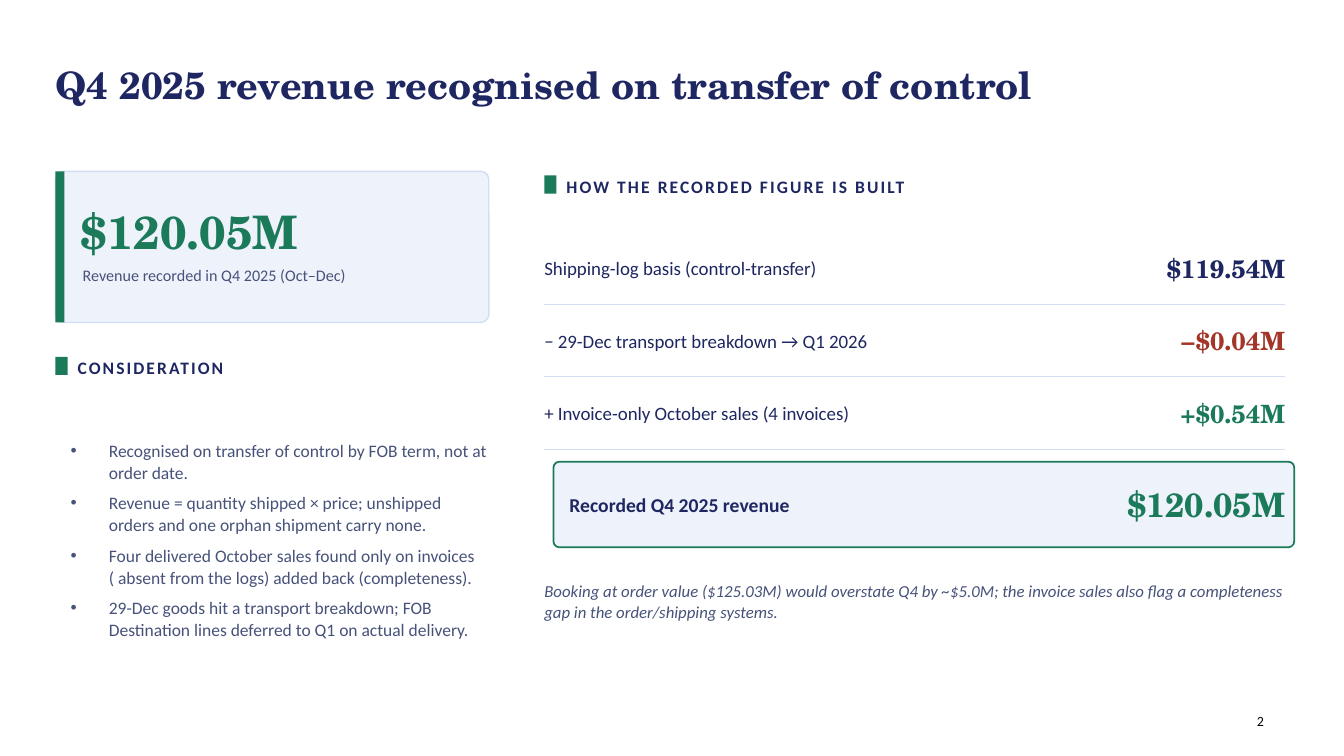
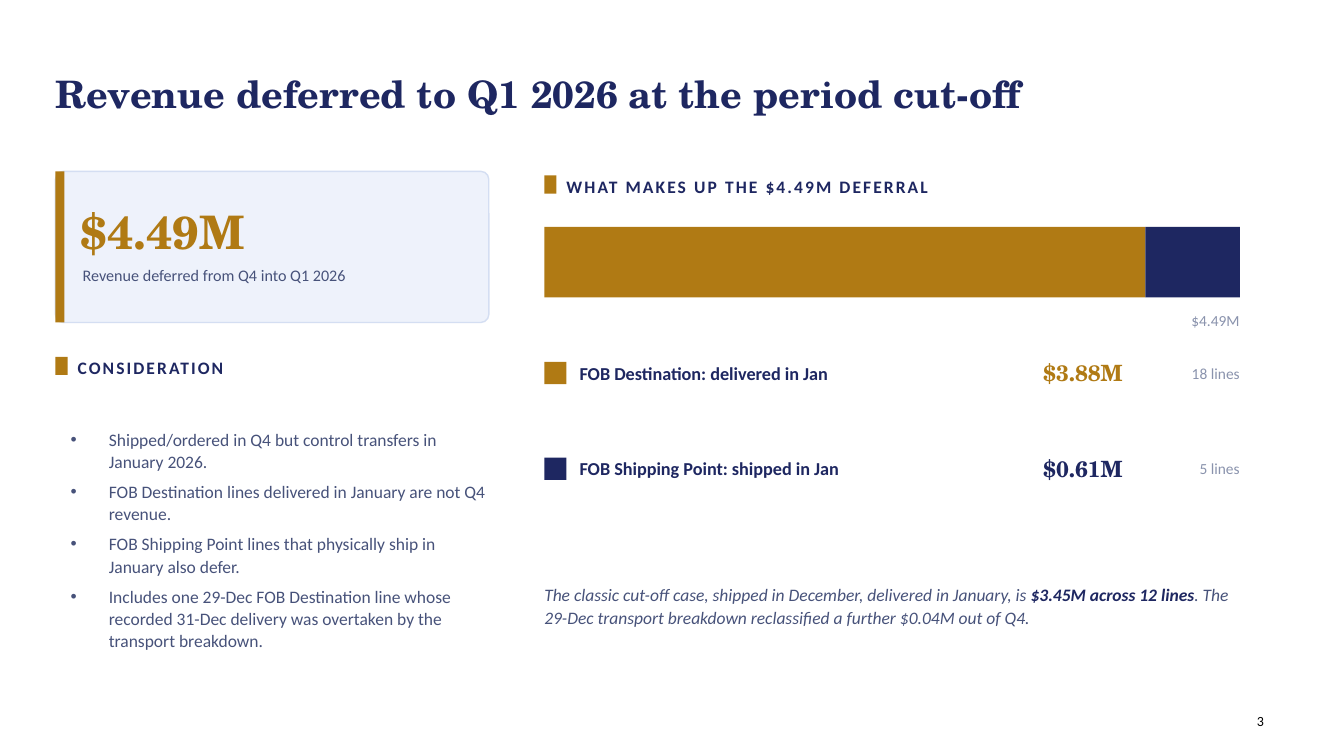
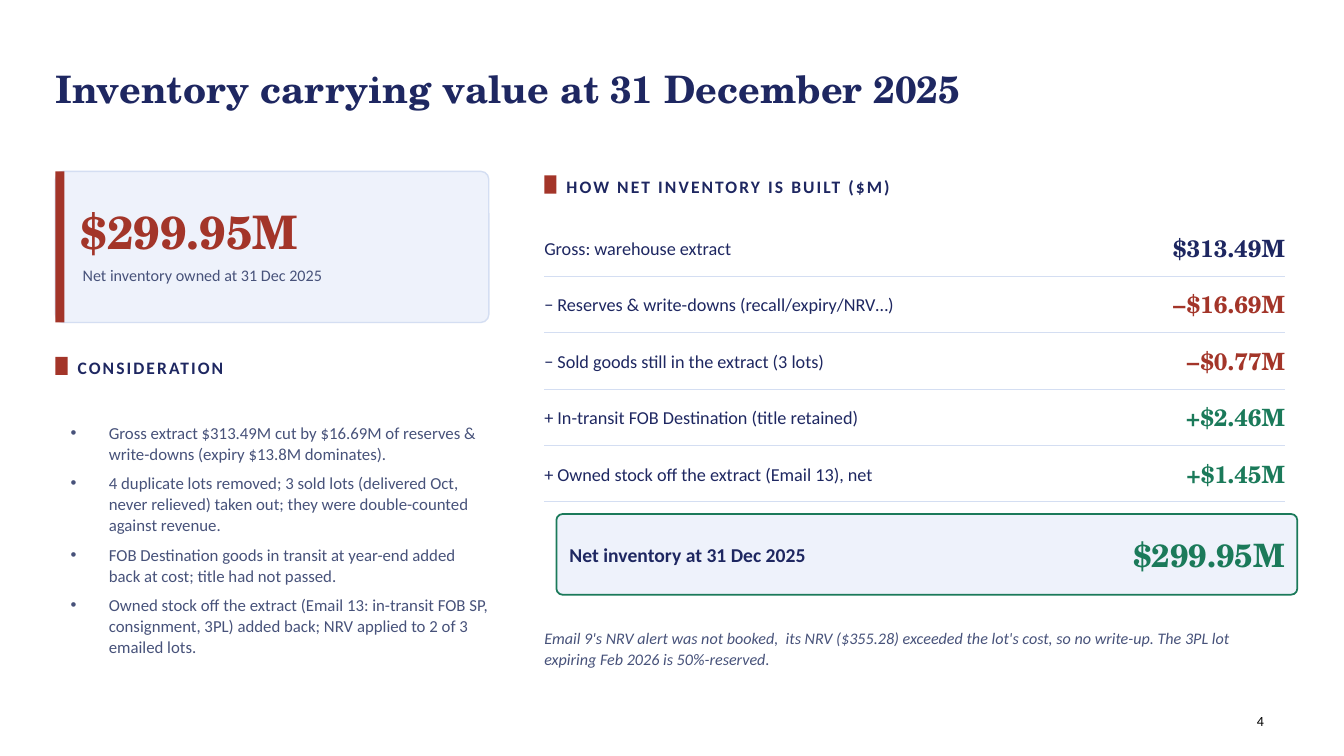
import pptx
import pptx.dml.color
import pptx.enum.shapes
import pptx.enum.text
import pptx.oxml
import pptx.oxml.ns
import pptx.util

Pt = pptx.util.Pt
ALIGN = pptx.enum.text.PP_ALIGN
ANCHOR = pptx.enum.text.MSO_ANCHOR
SHAPE = pptx.enum.shapes.MSO_SHAPE

COLORS = {
    "navy": "1E2761", "slate": "47527A", "muted": "8A93AD", "black": "000000",
    "green": "1B7A5A", "gold": "B07A14", "red": "A33529",
    "panel": "EEF2FB", "rule": "D4DEF2",
}
SANS, SERIF = "Calibri", "TeX Gyre Schola"

LEFT = 39.6
RIGHT_COLUMN = 388.8
RIGHT_EDGE = 918
CARD_TOP = 122.4


def rgb(name):
    return pptx.dml.color.RGBColor.from_string(COLORS[name])


def write(frame, text, *, size, color="navy", font=SANS, bold=False, italic=False,
          align=ALIGN.LEFT, anchor=ANCHOR.MIDDLE, leading=None, after=0,
          tracking=0, hanging=0, inset=(0, 0)):
    """Fill a frame. text is a string or a list of paragraphs, each a string
    or a list of strings and (string, format changes) pairs."""
    frame.word_wrap = True
    frame.auto_size = pptx.enum.text.MSO_AUTO_SIZE.NONE
    frame.vertical_anchor = anchor
    frame.margin_left = frame.margin_right = Pt(inset[0])
    frame.margin_top = frame.margin_bottom = Pt(inset[1])
    for index, content in enumerate([text] if isinstance(text, str) else text):
        paragraph = frame.add_paragraph() if index else frame.paragraphs[0]
        paragraph.alignment = align
        paragraph.space_before, paragraph.space_after = Pt(0), Pt(after)
        if leading:
            paragraph.line_spacing = leading
        if hanging:
            properties = paragraph._p.get_or_add_pPr()
            properties.set("marL", str(Pt(hanging)))
            properties.set("indent", str(-Pt(hanging)))
        for part in [content] if isinstance(content, str) else content:
            words, changes = (part, {}) if isinstance(part, str) else part
            run = paragraph.add_run()
            run.text = words
            run.font.name, run.font.size = font, Pt(size)
            run.font.bold = changes.get("bold", bold)
            run.font.italic = italic
            run.font.color.rgb = rgb(changes.get("color", color))
            if tracking:
                run._r.get_or_add_rPr().set("spc", str(int(tracking * 100)))


class Deck:
    def __init__(self):
        self.file = pptx.Presentation()
        self.file.slide_width, self.file.slide_height = Pt(960), Pt(540)
        self.slide = None
        self.accent = None

    def start(self, title, top, accent, number):
        self.slide = self.file.slides.add_slide(self.file.slide_layouts[1])
        self.accent = accent
        self.place(self.slide.shapes.title, LEFT, top, 820.8, 43.2)
        write(self.slide.shapes.title.text_frame, title, size=27, font=SERIF, bold=True)
        self.text((897.84, 509.04, 20, 14), number, size=10, color="black",
                  anchor=ANCHOR.TOP)

    def place(self, shape, left, top, width, height):
        shape.left, shape.top = Pt(left), Pt(top)
        shape.width, shape.height = Pt(width), Pt(height)

    def text(self, box, text, **style):
        frame = self.slide.shapes.add_textbox(*map(Pt, box)).text_frame
        write(frame, text, **style)

    def block(self, box, fill, radius=0, outline=None, weight=1):
        kind = SHAPE.ROUNDED_RECTANGLE if radius else SHAPE.RECTANGLE
        block = self.slide.shapes.add_shape(kind, *map(Pt, box))
        block.shadow.inherit = False
        block.fill.solid()
        block.fill.fore_color.rgb = rgb(fill)
        if radius:
            block.adjustments[0] = radius / box[3]
        if outline:
            block.line.color.rgb = rgb(outline)
            block.line.width = Pt(weight)
        else:
            block.line.fill.background()

    def rule(self, y):
        rule = self.slide.shapes.add_connector(
            pptx.enum.shapes.MSO_CONNECTOR.STRAIGHT,
            Pt(RIGHT_COLUMN), Pt(y), Pt(RIGHT_EDGE), Pt(y))
        rule.line.color.rgb = rgb("rule")
        rule.line.width = Pt(0.75)
        effects = pptx.oxml.parse_xml(
            f'<a:effectLst {pptx.oxml.ns.nsdecls("a")}/>')
        rule._element.spPr.append(effects)

    def heading(self, left, top, width, text):
        self.block((left, top + 2.88, 8.64, 12.96), self.accent)
        self.text((left + 15.84, top, width, 21.6), text, size=12.5, bold=True,
                  tracking=1.5)

    def summary(self, figure, caption, points, size=12.5, leading=1.05):
        """Left column: key figure card above the considerations."""
        self.block((LEFT, CARD_TOP, 309.6, 108), "panel", radius=5.76, outline="rule")
        self.block((LEFT, CARD_TOP, 6.48, 108), self.accent)
        self.text((57.6, 132.48, 280.8, 64.8), figure, size=33, font=SERIF,
                  color=self.accent, bold=True)
        self.text((59.04, 189.36, 277.2, 34.56), caption, size=11.5, color="slate",
                  anchor=ANCHOR.TOP)
        self.heading(LEFT, 252, 293.76, "CONSIDERATION")
        body = self.slide.placeholders[1]
        self.place(body, 43.2, 277.2, 313.2, 216)
        write(body.text_frame, points, size=size, color="slate", leading=leading,
              after=6, hanging=27.36, inset=(7.2, 3.6))

    def build_up(self, rows, top, pitch, size, value_size):
        """Draw ruled label and value rows and return their bottom."""
        for label, value in rows:
            color = {"−": "red", "+": "green"}.get(value[0], "navy")
            self.text((RIGHT_COLUMN, top, 360, pitch), label, size=size)
            self.text((759.6, top, 158.4, pitch), value, size=value_size, font=SERIF,
                      color=color, bold=True, align=ALIGN.RIGHT)
            top += pitch
            self.rule(top)
        return top

    def total(self, label, value, left, top, height, value_size):
        self.block((left, top, 529.2, height), "panel", radius=4.32,
                   outline="green", weight=1.25)
        self.text((406.8, top, 345.6, height), label, size=14, bold=True)
        self.text((745.2, top, 172.8, height), value, size=value_size, font=SERIF,
                  color="green", bold=True, align=ALIGN.RIGHT)
        return top + height

    def note(self, top, text, size, width=529.2, height=50.4, leading=1.05):
        self.text((RIGHT_COLUMN, top, width, height), [text], size=size,
                  color="slate", italic=True, leading=leading)

    def reconciliation(self, heading, rows, total, note, *, top, pitch, size,
                       value_size, total_left, total_height, total_size, note_size):
        """Right column: rows, boxed total and closing note."""
        self.heading(RIGHT_COLUMN, CARD_TOP, 509.76, heading)
        bottom = self.build_up(rows, top, pitch, size, value_size)
        bottom = self.total(*total, total_left, bottom + 8.64, total_height, total_size)
        self.note(bottom + 12.96, note, note_size)

    def composition(self, heading, total, parts):
        """Right column: bar split by amount, with a legend row for each part."""
        self.heading(RIGHT_COLUMN, CARD_TOP, 509.76, heading)
        bar_width = 496.8
        whole = sum(amount for _, amount, _, _ in parts)
        left = RIGHT_COLUMN
        for index, (label, amount, lines, color) in enumerate(parts):
            width = bar_width * amount / whole
            self.block((left, 162, width, 50.4), color)
            left += width
            top = 252 + 68.4 * index
            self.block((RIGHT_COLUMN, top + 6.48, 15.84, 15.84), color)
            self.text((414, top, 331.2, 28.8), label, size=13, bold=True)
            self.text((745.2, top, 79.2, 28.8), f"${amount}M", size=16, font=SERIF,
                      color=color, bold=True)
            self.text((824.4, top, 61.2, 28.8), lines, size=11, color="muted",
                      align=ALIGN.RIGHT)
        self.text((RIGHT_COLUMN, 218.16, bar_width, 21.6), total, size=11,
                  color="muted", align=ALIGN.RIGHT)


def revenue(deck):
    deck.start("Q4 2025 revenue recognised on transfer of control", 38.88, "green", "2")
    deck.summary("$120.05M", "Revenue recorded in Q4 2025 (Oct–Dec)", [
        "Recognised on transfer of control by FOB term, not at order date.",
        "Revenue = quantity shipped × price; unshipped orders and one orphan "
        "shipment carry none.",
        "Four delivered October sales found only on invoices ( absent from the logs) "
        "added back (completeness).",
        "29-Dec goods hit a transport breakdown; FOB Destination lines deferred to Q1 "
        "on actual delivery.",
    ])
    deck.reconciliation(
        "HOW THE RECORDED FIGURE IS BUILT",
        [("Shipping-log basis (control-transfer)", "$119.54M"),
         ("− 29-Dec transport breakdown → Q1 2026", "−$0.04M"),
         ("+ Invoice-only October sales (4 invoices)", "+$0.54M")],
        ("Recorded Q4 2025 revenue", "$120.05M"),
        "Booking at order value ($125.03M) would overstate Q4 by ~$5.0M; the invoice "
        "sales also flag a completeness gap in the order/shipping systems.",
        top=165.6, pitch=51.84, size=13.5, value_size=18,
        total_left=395.28, total_height=61.2, total_size=24, note_size=12)


def deferral(deck):
    deck.start("Revenue deferred to Q1 2026 at the period cut-off", 45.36, "gold", "3")
    deck.summary("$4.49M", "Revenue deferred from Q4 into Q1 2026", [
        "Shipped/ordered in Q4 but control transfers in January 2026.",
        "FOB Destination lines delivered in January are not Q4 revenue.",
        "FOB Shipping Point lines that physically ship in January also defer.",
        "Includes one 29-Dec FOB Destination line whose recorded 31-Dec delivery was "
        "overtaken by the transport breakdown.",
    ])
    deck.composition("WHAT MAKES UP THE $4.49M DEFERRAL", "$4.49M", [
        ("FOB Destination: delivered in Jan", 3.88, "18 lines", "gold"),
        ("FOB Shipping Point: shipped in Jan", 0.61, "5 lines", "navy"),
    ])
    deck.note(399.6, [
        "The classic cut-off case, shipped in December, delivered in January, is ",
        ("$3.45M across 12 lines", {"bold": True, "color": "navy"}),
        ". The 29-Dec transport breakdown reclassified a further $0.04M out of Q4.",
    ], 12.5, width=496.8, height=64.8, leading=1.1)


def inventory(deck):
    deck.start("Inventory carrying value at 31 December 2025", 41.76, "red", "4")
    deck.summary("$299.95M", "Net inventory owned at 31 Dec 2025", [
        "Gross extract $313.49M cut by $16.69M of reserves & write-downs "
        "(expiry $13.8M dominates).",
        "4 duplicate lots removed; 3 sold lots (delivered Oct, never relieved) taken "
        "out; they were double-counted against revenue.",
        "FOB Destination goods in transit at year-end added back at cost; title had "
        "not passed.",
        "Owned stock off the extract (Email 13: in-transit FOB SP, consignment, 3PL) "
        "added back; NRV applied to 2 of 3 emailed lots.",
    ], size=12, leading=1.04)
    deck.reconciliation(
        "HOW NET INVENTORY IS BUILT ($M)",
        [("Gross: warehouse extract", "$313.49M"),
         ("− Reserves & write-downs (recall/expiry/NRV…)", "−$16.69M"),
         ("− Sold goods still in the extract (3 lots)", "−$0.77M"),
         ("+ In-transit FOB Destination (title retained)", "+$2.46M"),
         ("+ Owned stock off the extract (Email 13), net", "+$1.45M")],
        ("Net inventory at 31 Dec 2025", "$299.95M"),
        "Email 9's NRV alert was not booked,  its NRV ($355.28) exceeded the lot's "
        "cost, so no write-up. The 3PL lot expiring Feb 2026 is 50%-reserved.",
        top=156.96, pitch=40.32, size=13, value_size=17,
        total_left=397.44, total_height=57.6, total_size=23, note_size=11.5)


def main():
    deck = Deck()
    for build in (revenue, deferral, inventory):
        build(deck)
    deck.file.save("out.pptx")


if __name__ == "__main__":
    main()
